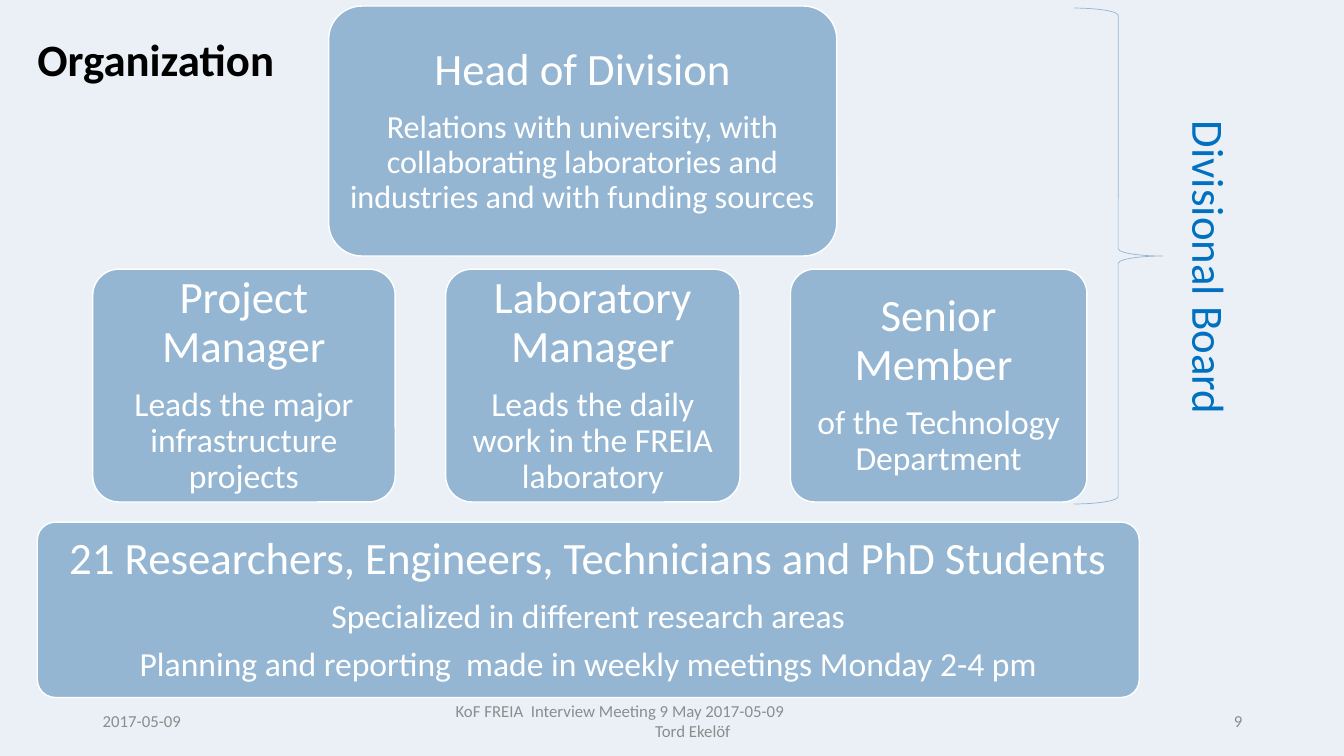
from pptx import Presentation
from pptx.dml.color import RGBColor
from pptx.enum.shapes import MSO_SHAPE as Shape
from pptx.enum.text import MSO_ANCHOR as Anchor, MSO_AUTO_SIZE as AutoSize, PP_ALIGN as Align
from pptx.util import Inches, Pt

FONT = "Calibri"
BACKGROUND = RGBColor(0xEA, 0xF0, 0xF6)
BOX_BLUE = RGBColor(0x94, 0xB6, 0xD2)
BOARD_BLUE = RGBColor(0x00, 0x70, 0xC0)
GRAY = RGBColor(0x8C, 0x8C, 0x8C)
WHITE = RGBColor(0xFF, 0xFF, 0xFF)
BLACK = RGBColor(0x00, 0x00, 0x00)

HEADING_SIZE = 32
ROW_TOP, ROW_HEIGHT = 2.67, 2.31
FOOTER_TOP, FOOTER_HEIGHT = 6.95, 0.4

# left, top, width, height, corner radius, text inset, detail size, lines
ROLES = [
    (0.37, 5.18, 10.93, 1.74, 0.18, 0.18, 24,
     ["21 Researchers, Engineers, Technicians and PhD Students",
      "Specialized in different research areas",
      "Planning and reporting  made in weekly meetings Monday 2-4 pm"]),
    (0.92, ROW_TOP, 3, ROW_HEIGHT, 0.26, 0.2, 24,
     ["Project Manager", "Leads the major infrastructure projects"]),
    (3.26, 0.06, 5.04, 2.48, 0.33, 0.21, 23,
     ["Head of Division",
      "Relations with university, with collaborating laboratories and "
      "industries and with funding sources"]),
    (4.42, ROW_TOP, 2.92, ROW_HEIGHT, 0.26, 0.2, 24,
     ["Laboratory Manager", "Leads the daily work in the FREIA laboratory"]),
    (7.84, ROW_TOP, 2.94, ROW_HEIGHT, 0.24, 0.21, 24,
     ["Senior Member ", "of the Technology Department"]),
]


def format_paragraph(paragraph, size, color, align=Align.LEFT, bold=False):
    paragraph.alignment = align
    for run in paragraph.runs:
        run.font.name = FONT
        run.font.size = Pt(size)
        run.font.bold = bold
        run.font.color.rgb = color


def place(shape, left, top, width, height):
    shape.left, shape.top = Inches(left), Inches(top)
    shape.width, shape.height = Inches(width), Inches(height)


def add_title(slide, text):
    title = slide.shapes.title
    place(title, 0.27, 0.26, 2.57, 0.64)
    text_frame = title.text_frame
    text_frame.text = text
    text_frame.word_wrap = False
    text_frame.auto_size = AutoSize.NONE
    text_frame.vertical_anchor = Anchor.TOP
    format_paragraph(text_frame.paragraphs[0], HEADING_SIZE, BLACK, bold=True)


def add_role(slide, left, top, width, height, radius, inset, detail_size, lines):
    shape = slide.shapes.add_shape(
        Shape.ROUNDED_RECTANGLE, Inches(left), Inches(top), Inches(width), Inches(height))
    shape.adjustments[0] = radius / min(width, height)
    shape.shadow.inherit = False
    shape.fill.solid()
    shape.fill.fore_color.rgb = BOX_BLUE
    shape.line.color.rgb = WHITE
    shape.line.width = Pt(1)

    text_frame = shape.text_frame
    text_frame.text = "\n".join(lines)
    text_frame.word_wrap = True
    text_frame.vertical_anchor = Anchor.MIDDLE
    # A rounded rectangle already insets its text by 0.29 of the radius
    margin = Inches(inset - 0.29 * radius)
    text_frame.margin_left = text_frame.margin_right = margin
    text_frame.margin_top = text_frame.margin_bottom = margin
    for index, paragraph in enumerate(text_frame.paragraphs):
        size = detail_size if index else HEADING_SIZE
        format_paragraph(paragraph, size, WHITE, Align.CENTER)
        paragraph.line_spacing = 0.9
        paragraph.space_after = Pt(round(0.35 * size, 1))


def add_text(slide, left, top, width, height, text, size, color,
             align=Align.LEFT, anchor=Anchor.MIDDLE, wrap=True):
    box = slide.shapes.add_textbox(
        Inches(left), Inches(top), Inches(width), Inches(height))
    text_frame = box.text_frame
    text_frame.text = text
    text_frame.word_wrap = wrap
    text_frame.vertical_anchor = anchor
    for paragraph in text_frame.paragraphs:
        format_paragraph(paragraph, size, color, align)
    return box


def add_footer(slide):
    def add_part(left, width, text, align=Align.LEFT):
        return add_text(slide, left, FOOTER_TOP, width, FOOTER_HEIGHT, text, 12, GRAY, align)

    add_part(0.92, 3, "2017-05-09")
    meeting = add_part(
        4.42, 4.5, "KoF FREIA  Interview Meeting 9 May 2017-05-09\nTord Ekelöf")
    # Indent the speaker's name below the meeting
    speaker = meeting.text_frame.paragraphs[1]
    speaker._p.get_or_add_pPr().set("marL", str(Inches(1.98)))
    add_part(9.42, 3, "9", Align.RIGHT)


def add_board(slide):
    brace = slide.shapes.add_shape(
        Shape.RIGHT_BRACE, Inches(10.65), Inches(0.08), Inches(0.88), Inches(4.92))
    brace.shadow.inherit = False
    brace.fill.background()
    brace.line.color.rgb = BOX_BLUE
    brace.line.width = Pt(0.5)
    label = add_text(slide, 10.43, 2.35, 3.14, 0.64, "Divisional Board",
                     HEADING_SIZE, BOARD_BLUE, anchor=Anchor.TOP, wrap=False)
    label.rotation = 90


def main():
    presentation = Presentation()
    presentation.slide_width = Inches(13.33)
    presentation.slide_height = Inches(7.5)
    slide = presentation.slides.add_slide(presentation.slide_layouts[5])
    slide.background.fill.solid()
    slide.background.fill.fore_color.rgb = BACKGROUND

    add_footer(slide)
    # Organization chart
    for role in ROLES:
        add_role(slide, *role)
    add_title(slide, "Organization")
    add_board(slide)

    presentation.save("out.pptx")


if __name__ == "__main__":
    main()
